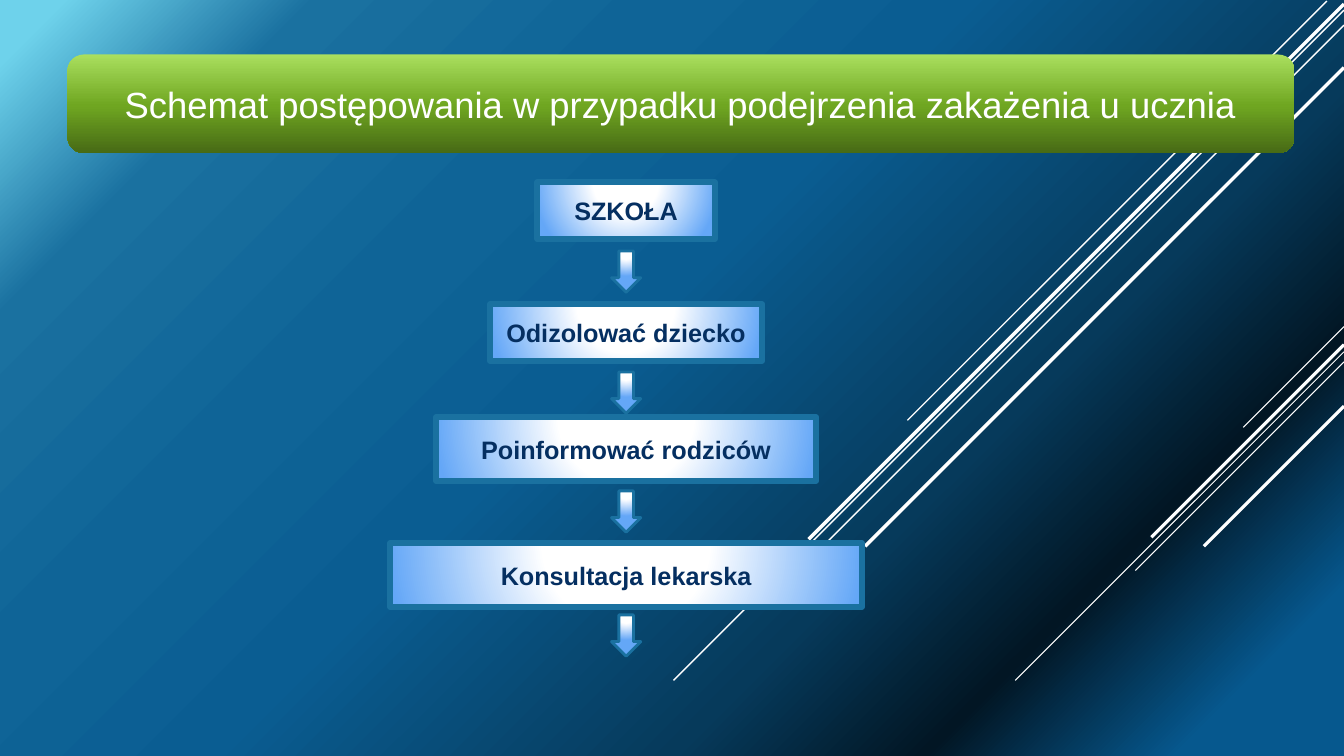
from lxml.etree import SubElement
from pptx import Presentation
from pptx.dml.color import RGBColor
from pptx.enum.shapes import MSO_CONNECTOR, MSO_SHAPE
from pptx.enum.text import MSO_ANCHOR, PP_ALIGN
from pptx.oxml import parse_xml
from pptx.oxml.ns import nsdecls, qn
from pptx.util import Inches, Pt

TITLE = "Schemat postępowania w przypadku podejrzenia zakażenia u ucznia"
# text, top, width, height, top of the arrow below
STEPS = [
    ("SZKOŁA", 1.81, 1.76, 0.56, 2.49),
    ("Odizolować dziecko", 3.02, 2.7, 0.56, 3.69),
    ("Poinformować rodziców", 4.14, 3.77, 0.63, 4.87),
    ("Konsultacja lekarska", 5.39, 4.68, 0.63, 6.1),
]
# start x, start y, horizontal run of the 45-degree line, width in points
RAYS = [
    (13.33, 3.24, 1, 0.75), (13.33, 3.49, 3.26, 0.75),
    (13.33, 3.59, 2.07, 0.75), (13.33, 3.42, 1.91, 2.25),
    (13.33, 4.03, 1.39, 2.25), (13.16, 0.01, 4.16, 1),
    (13.33, 0.1, 6.65, 1), (13.33, 0.25, 5.42, 1),
    (13.33, 0.04, 5.31, 2.5), (13.33, 0.67, 4.75, 2.5),
]
COLORS = {"white": "FFFFFF", "navy": "052F61", "border": "1A71A0"}
BACKGROUND_STOPS = [(3, "6ED2EB"), (15, "1A71A0"), (32, "0F6497"), (46, "0A5D92"),
                    (68, "063A5B"), (80, "021624"), (92, "06588E")]
STEP_STOPS = [(0, "FFFFFF"), (35, "FFFFFF"), (100, "64A7F7")]
TITLE_STOPS = [(0, "AADF5E"), (52, "6FA621"), (100, "476A15")]
STEP_GLOW = ('<a:path path="circle"><a:fillToRect l="50000" t="-80000" '
             'r="50000" b="180000"/></a:path>')
CENTER_X = 6.21
ARROW_LENGTH, ARROW_WIDTH = 0.41, 0.29


def linear(degrees):
    return f'<a:lin ang="{degrees * 60000}" scaled="0"/>'


def gradient(stops, direction):
    stop_list = "".join(
        f'<a:gs pos="{position * 1000}"><a:srgbClr val="{color}"/></a:gs>'
        for position, color in stops)
    return parse_xml(f'<a:gradFill {nsdecls("a")} rotWithShape="0">'
                     f'<a:gsLst>{stop_list}</a:gsLst>{direction}</a:gradFill>')


def replace_fill(owner, properties, stops, direction):
    """Put a gradient where the solid fill of the owner stands."""
    owner.fill.solid()
    solid = properties.find(qn("a:solidFill"))
    properties.replace(solid, gradient(stops, direction))


def add_ray(slide, x, y, run, width):
    ray = slide.shapes.add_connector(
        MSO_CONNECTOR.STRAIGHT, Inches(x), Inches(y), Inches(x - run), Inches(y + run))
    ray.line.color.rgb = RGBColor.from_string(COLORS["white"])
    ray.line.width = Pt(width)
    SubElement(ray._element.spPr, qn("a:effectLst"))


def add_block(slide, kind, box, stops, direction, border=None):
    shape = slide.shapes.add_shape(kind, *map(Inches, box))
    shape.shadow.inherit = False
    replace_fill(shape, shape._element.spPr, stops, direction)
    if border:
        shape.line.color.rgb = RGBColor.from_string(COLORS["border"])
        shape.line.width = Pt(border)
    else:
        shape.line.fill.background()
    return shape


def write(shape, text, color, **font_format):
    frame = shape.text_frame
    frame.word_wrap = True
    frame.vertical_anchor = MSO_ANCHOR.MIDDLE
    paragraph = frame.paragraphs[0]
    paragraph.alignment = PP_ALIGN.CENTER
    run = paragraph.add_run()
    run.text = text
    run.font.color.rgb = RGBColor.from_string(COLORS[color])
    for name, value in {"name": "Arial", **font_format}.items():
        setattr(run.font, name, value)


def main():
    presentation = Presentation()
    presentation.slide_width = Inches(13.33)
    presentation.slide_height = Inches(7.5)
    slide = presentation.slides.add_slide(presentation.slide_layouts[6])
    background = slide.background
    background.fill.solid()
    replace_fill(background, slide._element.cSld.bg.bgPr, BACKGROUND_STOPS, linear(45))

    for ray in RAYS:
        add_ray(slide, *ray)

    for text, top, width, height, arrow_top in STEPS:
        # The right arrow is turned about its centre to point down.
        arrow_box = (CENTER_X - ARROW_LENGTH / 2,
                     arrow_top + (ARROW_LENGTH - ARROW_WIDTH) / 2,
                     ARROW_LENGTH, ARROW_WIDTH)
        arrow = add_block(slide, MSO_SHAPE.RIGHT_ARROW, arrow_box,
                          STEP_STOPS, STEP_GLOW, border=2)
        arrow.rotation = 90
        step_box = (CENTER_X - width / 2, top, width, height)
        step = add_block(slide, MSO_SHAPE.RECTANGLE, step_box,
                         STEP_STOPS, STEP_GLOW, border=4.25)
        write(step, text, "navy", size=Pt(18), bold=True)

    title = add_block(slide, MSO_SHAPE.ROUNDED_RECTANGLE, (0.67, 0.54, 12.17, 0.98),
                      TITLE_STOPS, linear(90))
    write(title, TITLE, "white", size=Pt(26))
    presentation.save("out.pptx")


if __name__ == "__main__":
    main()
